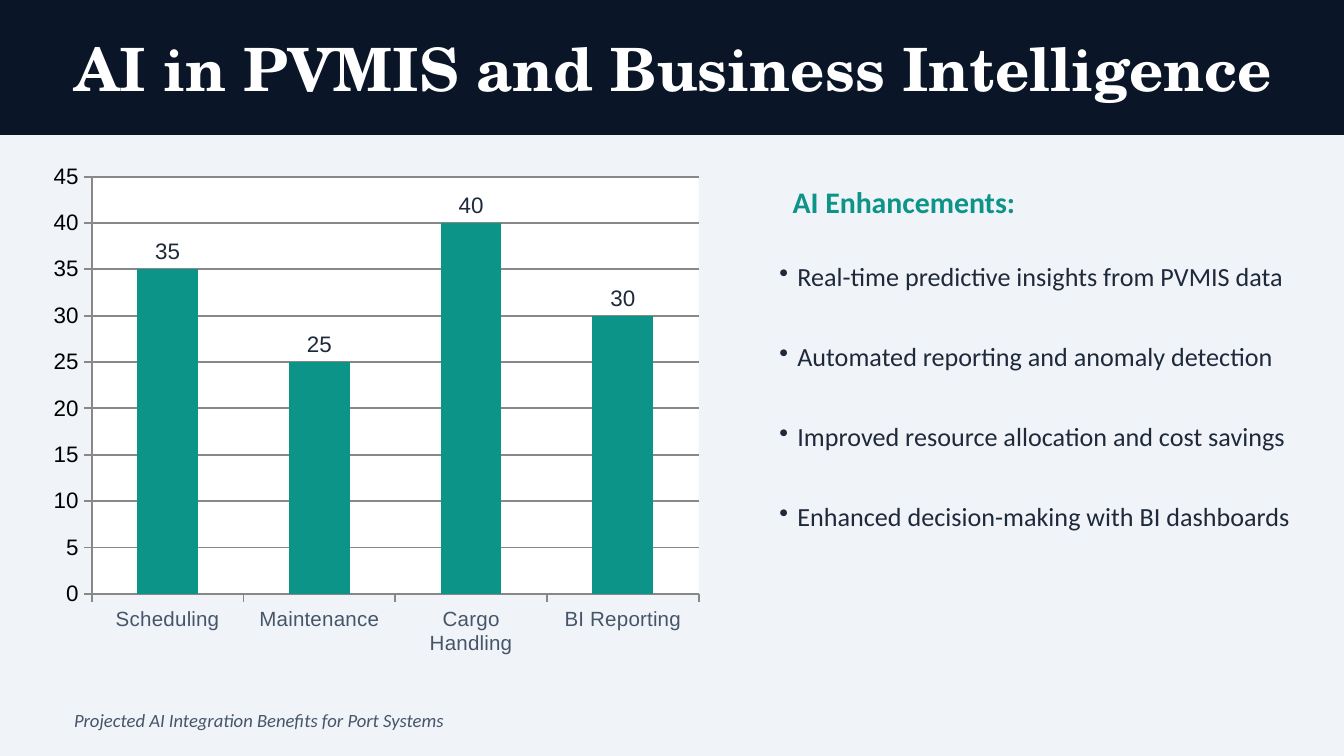
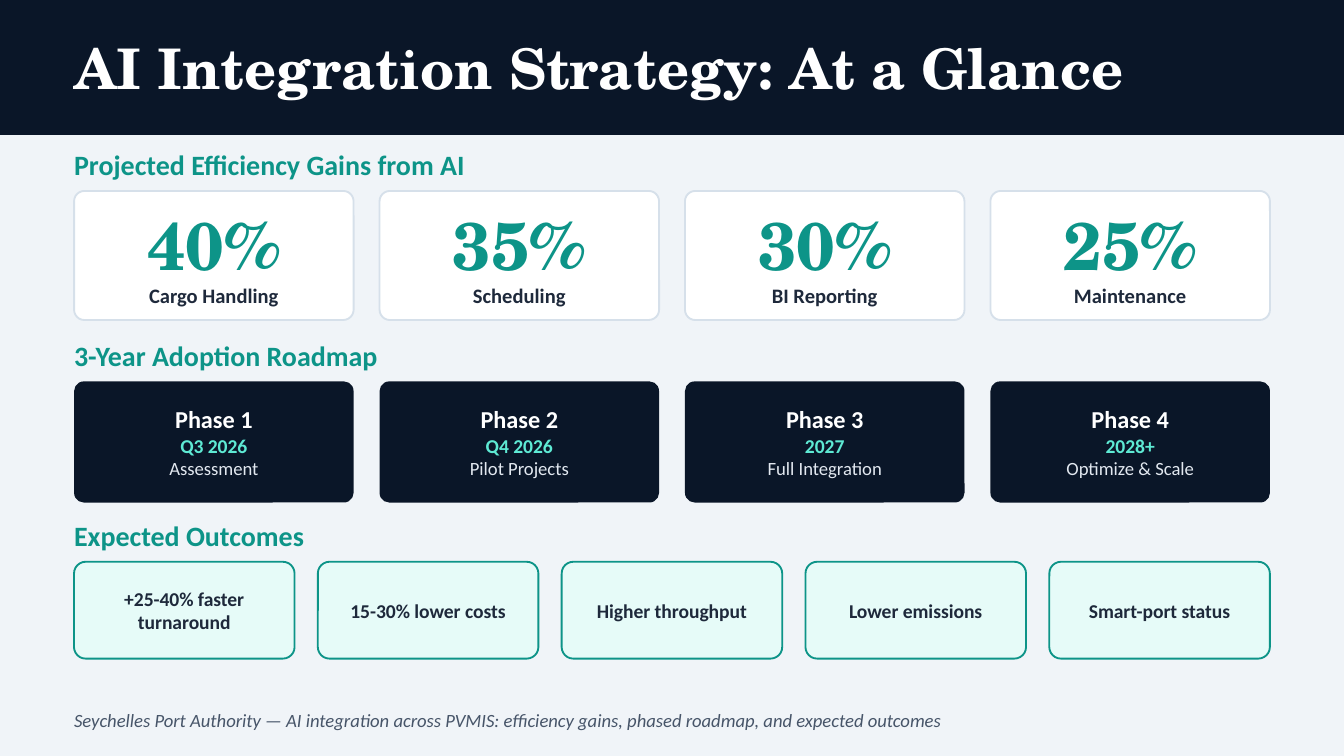
from dataclasses import dataclass

from lxml import etree
from pptx import Presentation
from pptx.chart.data import CategoryChartData
from pptx.dml.color import RGBColor
from pptx.enum.chart import XL_CHART_TYPE as ChartType, XL_LABEL_POSITION as LabelPosition
from pptx.enum.chart import XL_TICK_MARK as TickMark
from pptx.enum.shapes import MSO_SHAPE as Shape
from pptx.enum.text import MSO_ANCHOR as Anchor, MSO_AUTO_SIZE as AutoSize, PP_ALIGN as Align
from pptx.oxml import parse_xml
from pptx.oxml.ns import nsdecls, qn
from pptx.util import Cm, Pt


@dataclass(frozen=True)
class TextStyle:
    size: float
    color: str
    font: str = "Calibri"
    bold: bool = False
    italic: bool = False


@dataclass(frozen=True)
class CardStyle:
    fill: str
    line: str | None
    radius: float
    texts: tuple


class Theme:
    page, navy, teal, white = "F0F4F8", "0A1628", "0D9488", "FFFFFF"
    ink, slate, axis = "1E293B", "475569", "888888"
    serif = "TeX Gyre Schola"

    wide_title = TextStyle(32, white, serif, bold=True)
    title = TextStyle(30, white, serif, bold=True)
    lead = TextStyle(16, teal, bold=True)
    section = TextStyle(15, teal, bold=True)
    bullet = TextStyle(14, ink)
    footer = TextStyle(10, slate, italic=True)
    chart = TextStyle(10, "000000")
    value_axis = TextStyle(12, "000000", "Arial")
    category_axis = TextStyle(11, slate, "Arial")
    data_label = TextStyle(12, ink, "Arial")

    gain = CardStyle(white, "D6E0EA", 0.08, (
        TextStyle(36, teal, serif, bold=True), TextStyle(11, ink, bold=True)))
    phase = CardStyle(navy, None, 0.08, (
        TextStyle(13, white, bold=True), TextStyle(10.5, "5EEAD4", bold=True),
        TextStyle(10, "E2E8F0")))
    outcome = CardStyle("E6FBF8", teal, 0.12, (TextStyle(10.5, ink, bold=True),))


PAGE_WIDTH, PAGE_HEIGHT = 25.4, 14.29
MARGIN, CONTENT_WIDTH = 1.4, 22.6


def rgb(color):
    return RGBColor.from_string(color)


def apply_font(font, style):
    font.name = style.font
    font.size = Pt(style.size)
    font.bold = style.bold
    font.italic = style.italic
    font.color.rgb = rgb(style.color)


def draw_line(line, color):
    line.color.rgb = rgb(color)
    line.width = Pt(1)


def set_frame(frame, inset):
    frame.word_wrap = True
    frame.auto_size = AutoSize.NONE
    frame.vertical_anchor = Anchor.MIDDLE
    frame.margin_left = frame.margin_right = Cm(inset)
    frame.margin_top = frame.margin_bottom = Cm(inset)


def write_lines(frame, lines, styles, align):
    frame.text = "\n".join(lines)
    for paragraph, style in zip(frame.paragraphs, styles):
        paragraph.alignment = align
        apply_font(paragraph.font, style)


def add_text(slide, text, style, left, top, width, height, inset=0):
    frame = slide.shapes.add_textbox(Cm(left), Cm(top), Cm(width), Cm(height)).text_frame
    set_frame(frame, inset)
    write_lines(frame, [text], [style], Align.LEFT)


def add_bullets(slide, items, left, top, width, height):
    frame = slide.shapes.add_textbox(Cm(left), Cm(top), Cm(width), Cm(height)).text_frame
    set_frame(frame, 0)
    frame.text = "\n".join(items)
    for number, paragraph in enumerate(frame.paragraphs):
        properties = paragraph._p.get_or_add_pPr()
        properties.set("marL", str(Cm(0.34)))
        properties.set("indent", str(Cm(-0.34)))
        etree.SubElement(properties, qn("a:buChar"), char="•")
        apply_font(paragraph.font, Theme.bullet)
        if number:
            paragraph.space_before = Pt(26)


def add_panel(slide, kind, fill, line, left, top, width, height):
    panel = slide.shapes.add_shape(kind, Cm(left), Cm(top), Cm(width), Cm(height))
    panel.shadow.inherit = False
    panel.fill.solid()
    panel.fill.fore_color.rgb = rgb(fill)
    if line:
        draw_line(panel.line, line)
    else:
        panel.line.fill.background()
    return panel


def add_slide(deck, title, style, footer, width=CONTENT_WIDTH):
    slide = deck.slides.add_slide(deck.slide_layouts.get_by_name("Title Only"))
    heading = slide.shapes.title
    heading.left, heading.top = Cm(MARGIN), Cm(0.38)
    heading.width, heading.height = Cm(width), Cm(1.78)
    set_frame(heading.text_frame, 0)
    write_lines(heading.text_frame, [title], [style], Align.LEFT)
    band = add_panel(slide, Shape.RECTANGLE, Theme.navy, Theme.navy, 0, 0, PAGE_WIDTH, 2.54)
    heading.element.addprevious(band.element)
    add_text(slide, footer, Theme.footer, MARGIN, 13.21, width, 0.81)
    return slide


def add_card_section(slide, heading, top, height, gap, style, cards):
    add_text(slide, heading, Theme.section, MARGIN, top, CONTENT_WIDTH, 0.79)
    width = (CONTENT_WIDTH - gap * (len(cards) - 1)) / len(cards)
    for column, lines in enumerate(cards):
        left = MARGIN + column * (width + gap)
        card = add_panel(slide, Shape.ROUNDED_RECTANGLE, style.fill, style.line,
                         left, top + 0.89, width, height)
        card.adjustments[0] = style.radius
        set_frame(card.text_frame, 0.13)
        write_lines(card.text_frame, lines, style.texts, Align.CENTER)


def format_axis(axis, style):
    axis.major_tick_mark = TickMark.OUTSIDE
    axis.minor_tick_mark = TickMark.NONE
    apply_font(axis.tick_labels.font, style)
    draw_line(axis.format.line, Theme.axis)


def add_column_chart(slide, benefits, left, top, width, height):
    data = CategoryChartData()
    data.categories = benefits.keys()
    data.add_series("Series 1", benefits.values())
    chart = slide.shapes.add_chart(ChartType.COLUMN_CLUSTERED, Cm(left), Cm(top),
                                   Cm(width), Cm(height), data).chart
    chart.has_title = chart.has_legend = False
    apply_font(chart.font, Theme.chart)

    format_axis(chart.category_axis, Theme.category_axis)
    values = chart.value_axis
    format_axis(values, Theme.value_axis)
    values.minimum_scale, values.maximum_scale, values.major_unit = 0, 45, 5
    values.has_major_gridlines = True
    draw_line(values.major_gridlines.format.line, Theme.axis)

    plot = chart.plots[0]
    plot.gap_width = 150
    plot.vary_by_categories = False
    columns = plot.series[0]
    columns.format.fill.solid()
    columns.format.fill.fore_color.rgb = rgb(Theme.teal)
    labels = columns.data_labels
    labels.show_value = True
    labels.number_format, labels.number_format_is_linked = "#,##0", False
    labels.position = LabelPosition.OUTSIDE_END
    apply_font(labels.font, Theme.data_label)

    plot_area = chart.element.find(".//" + qn("c:plotArea"))
    plot_area.append(parse_xml(
        f'<c:spPr {nsdecls("c", "a")}><a:solidFill>'
        f'<a:srgbClr val="{Theme.white}"/></a:solidFill></c:spPr>'))


def build_benefits(deck):
    slide = add_slide(deck, "AI in PVMIS and Business Intelligence", Theme.wide_title,
                      "Projected AI Integration Benefits for Port Systems", width=22.86)
    add_column_chart(slide, {"Scheduling": 35, "Maintenance": 25,
                             "Cargo Handling": 40, "BI Reporting": 30},
                     0.76, 2.92, 12.7, 9.65)
    add_text(slide, "AI Enhancements:", Theme.lead, 14.73, 3.3, 10.16, 1.02, inset=0.25)
    add_bullets(slide, ["Real-time predictive insights from PVMIS data",
                        "Automated reporting and anomaly detection",
                        "Improved resource allocation and cost savings",
                        "Enhanced decision-making with BI dashboards"],
                14.73, 4.57, 10.16, 5.84)


def build_strategy(deck):
    slide = add_slide(deck, "AI Integration Strategy: At a Glance", Theme.title,
                      "Seychelles Port Authority — AI integration across PVMIS: "
                      "efficiency gains, phased roadmap, and expected outcomes")
    add_card_section(slide, "Projected Efficiency Gains from AI", 2.72, 2.44, 0.49, Theme.gain, [
        ("40%", "Cargo Handling"), ("35%", "Scheduling"),
        ("30%", "BI Reporting"), ("25%", "Maintenance")])
    add_card_section(slide, "3-Year Adoption Roadmap", 6.32, 2.29, 0.49, Theme.phase, [
        ("Phase 1", "Q3 2026", "Assessment"), ("Phase 2", "Q4 2026", "Pilot Projects"),
        ("Phase 3", "2027", "Full Integration"), ("Phase 4", "2028+", "Optimize & Scale")])
    add_card_section(slide, "Expected Outcomes", 9.73, 1.83, 0.44, Theme.outcome, [
        ("+25-40% faster turnaround",), ("15-30% lower costs",), ("Higher throughput",),
        ("Lower emissions",), ("Smart-port status",)])


def main():
    deck = Presentation()
    deck.slide_width, deck.slide_height = Cm(PAGE_WIDTH), Cm(PAGE_HEIGHT)
    background = deck.slide_master.background.fill
    background.solid()
    background.fore_color.rgb = rgb(Theme.page)
    build_benefits(deck)
    build_strategy(deck)
    deck.save("out.pptx")


if __name__ == "__main__":
    main()
